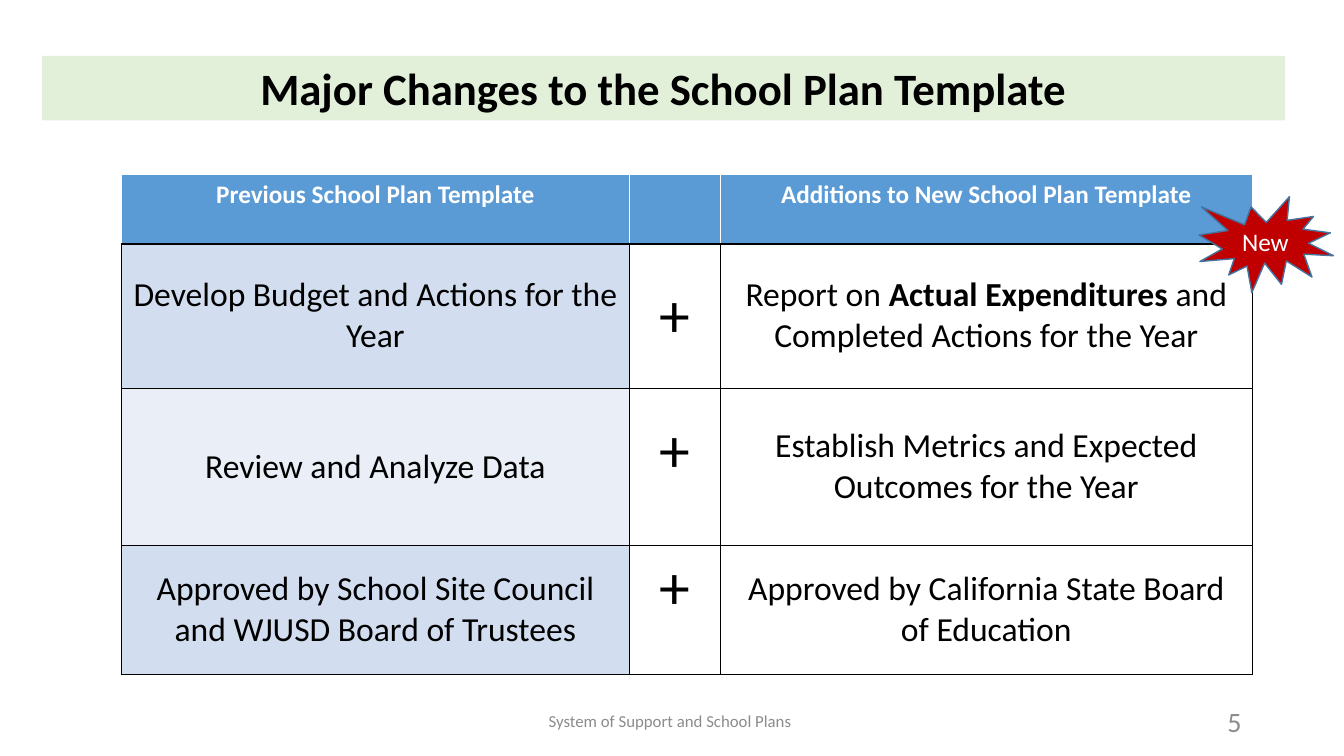
from dataclasses import dataclass

from lxml.etree import SubElement
from pptx import Presentation
from pptx.dml.color import RGBColor
from pptx.enum.shapes import MSO_SHAPE
from pptx.enum.text import MSO_ANCHOR, PP_ALIGN
from pptx.oxml.ns import qn
from pptx.util import Pt


@dataclass(frozen=True)
class Theme:
    font: str = "Calibri"
    black: str = "000000"
    white: str = "FFFFFF"
    gray: str = "8C8C8C"
    banner: str = "E2F0D9"
    header: str = "5B9BD5"
    bands: tuple = ("D2DEEF", "EAEFF7")
    badge: str = "C00000"
    badge_line: str = "43739E"
    title_size: int = 32
    header_size: int = 18
    body_size: int = 24
    plus_size: int = 44
    footer_size: int = 12
    number_size: int = 20


THEME = Theme()

HEADINGS = ("Previous School Plan Template", "", "Additions to New School Plan Template")
# Each row: height, previous template, additions as (text, bold) spans
CHANGES = (
    (103, "Develop Budget and Actions for the Year",
     (("Report on ", False), ("Actual Expenditures ", True),
      ("and Completed Actions for the Year", False))),
    (112.5, "Review and Analyze Data",
     (("Establish Metrics and Expected Outcomes for the Year", False),)),
    (92, "Approved by School Site Council and WJUSD Board of Trustees",
     (("Approved by California State Board of Education", False),)),
)
HEADER_HEIGHT = 49.5
COLUMN_WIDTHS = (362.75, 65, 380)


def color(value):
    return RGBColor.from_string(value)


def write(frame, spans, size, ink, bold=False, align=PP_ALIGN.CENTER):
    """Fill a text frame with one paragraph of (text, bold) spans."""
    frame.word_wrap = True
    para = frame.paragraphs[0]
    para.alignment = align
    para.font.name = THEME.font
    para.font.size = Pt(size)
    para.font.color.rgb = color(ink)
    mixed = len({strong for _, strong in spans}) > 1
    if not mixed:
        para.font.bold = bold
    for text, strong in spans:
        span = para.add_run()
        span.text = text
        if mixed:
            span.font.bold = strong


def add_title(slide, box):
    title = slide.shapes.title
    title.left, title.top, title.width, title.height = map(Pt, box)
    title.fill.solid()
    title.fill.fore_color.rgb = color(THEME.banner)
    write(title.text_frame, [("Major Changes to the School Plan Template", True)],
          THEME.title_size, THEME.black, bold=True)
    title.text_frame.vertical_anchor = MSO_ANCHOR.TOP


def set_borders(cell, colors):
    """Draw left, right, top and bottom cell borders, in that order."""
    properties = cell._tc.get_or_add_tcPr()
    for side, ink in zip(("a:lnL", "a:lnR", "a:lnT", "a:lnB"), colors):
        line = SubElement(properties, qn(side), w=str(Pt(1)))
        SubElement(SubElement(line, qn("a:solidFill")), qn("a:srgbClr"), val=ink)


def style_cell(cell, fill, borders, anchor):
    set_borders(cell, borders)
    if fill:
        cell.fill.solid()
        cell.fill.fore_color.rgb = color(fill)
    else:
        cell.fill.background()
    cell.vertical_anchor = anchor


def add_changes_table(slide, left, top):
    heights = (HEADER_HEIGHT, *(height for height, _, _ in CHANGES))
    table = slide.shapes.add_table(
        len(heights), len(COLUMN_WIDTHS), Pt(left), Pt(top),
        Pt(sum(COLUMN_WIDTHS)), Pt(sum(heights))).table
    table.horz_banding = False
    for column, width in zip(table.columns, COLUMN_WIDTHS):
        column.width = Pt(width)
    for row, height in zip(table.rows, heights):
        row.height = Pt(height)

    # Header row
    for index, heading in enumerate(HEADINGS):
        cell = table.cell(0, index)
        style_cell(cell, THEME.header, (THEME.white,) * 3 + (THEME.black,), MSO_ANCHOR.TOP)
        if heading:
            write(cell.text_frame, [(heading, True)], THEME.header_size, THEME.white, bold=True)

    # Body rows
    for number, (_, previous, additions) in enumerate(CHANGES, start=1):
        band = THEME.bands[(number - 1) % 2]
        contents = (
            ([(previous, False)], THEME.body_size, band),
            ([("+", False)], THEME.plus_size, None),
            (additions, THEME.body_size, None),
        )
        for index, (spans, size, fill) in enumerate(contents):
            cell = table.cell(number, index)
            style_cell(cell, fill, (THEME.black,) * 4, MSO_ANCHOR.MIDDLE)
            write(cell.text_frame, spans, size, THEME.black)

    # The lower plus signs sit above the middle of their rows
    table.cell(2, 1).margin_bottom = Pt(25)
    table.cell(3, 1).vertical_anchor = MSO_ANCHOR.TOP


def add_badge(slide, box):
    badge = slide.shapes.add_shape(MSO_SHAPE.EXPLOSION1, *map(Pt, box))
    badge.shadow.inherit = False
    badge.fill.solid()
    badge.fill.fore_color.rgb = color(THEME.badge)
    badge.line.color.rgb = color(THEME.badge_line)
    badge.line.width = Pt(1)
    write(badge.text_frame, [("New", False)], THEME.header_size, THEME.white)
    badge.text_frame.vertical_anchor = MSO_ANCHOR.MIDDLE


def add_footer_text(slide, box, text, size, align):
    frame = slide.shapes.add_textbox(*map(Pt, box)).text_frame
    write(frame, [(text, False)], size, THEME.gray, align=align)
    frame.vertical_anchor = MSO_ANCHOR.MIDDLE


def add_changes_slide(deck):
    slide = deck.slides.add_slide(deck.slide_layouts[5])
    add_footer_text(slide, (318, 500.5, 324, 28.75), "System of Support and School Plans ",
                    THEME.footer_size, PP_ALIGN.CENTER)
    add_footer_text(slide, (678, 500.5, 216, 28.75), "5", THEME.number_size, PP_ALIGN.RIGHT)
    add_title(slide, (30, 40, 888, 46))
    add_changes_table(slide, 86.75, 124.75)
    add_badge(slide, (856.5, 140.5, 96, 68.5))


def main():
    deck = Presentation()
    deck.slide_width, deck.slide_height = Pt(960), Pt(540)
    add_changes_slide(deck)
    deck.save("out.pptx")


if __name__ == "__main__":
    main()
